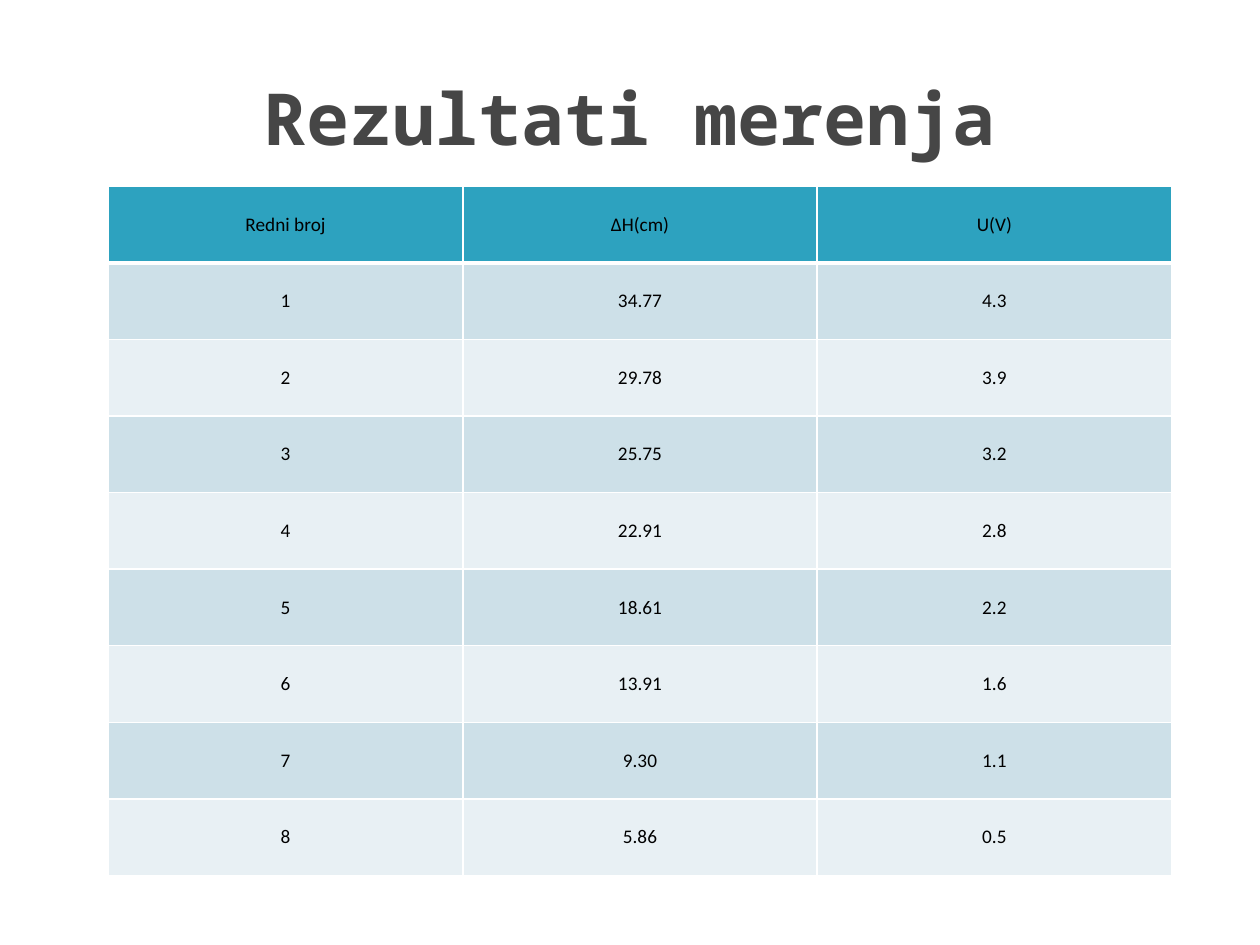
from dataclasses import dataclass

import pptx
import pptx.dml.color
import pptx.enum.text
import pptx.oxml
import pptx.oxml.ns
import pptx.util
from pptx.util import Inches

TITLE = "Rezultati merenja"
HEADERS = ("Redni broj", "∆H(cm)", "U(V)")
MEASUREMENTS = (
    ("34.77", "4.3"),
    ("29.78", "3.9"),
    ("25.75", "3.2"),
    ("22.91", "2.8"),
    ("18.61", "2.2"),
    ("13.91", "1.6"),
    ("9.30", "1.1"),
    ("5.86", "0.5"),
)


@dataclass(frozen=True)
class Theme:
    title_font: str = "Noto Sans Mono"
    title_size: float = 41
    title_color: str = "464646"
    table_font: str = "Calibri"
    table_size: float = 11
    table_color: str = "000000"
    header_fill: str = "2DA2BF"
    band_fills: tuple = ("CDE0E8", "E8F0F4")
    border_color: str = "FFFFFF"
    border_width: float = 1
    header_rule_width: float = 3


THEME = Theme()


def color(value):
    return pptx.dml.color.RGBColor.from_string(value)


def write_centred(text_frame, text, font_name, size, font_color, bold=False):
    text_frame.text = text
    paragraph = text_frame.paragraphs[0]
    paragraph.alignment = pptx.enum.text.PP_ALIGN.CENTER
    font = paragraph.runs[0].font
    font.name = font_name
    font.size = pptx.util.Pt(size)
    font.bold = bold
    font.color.rgb = color(font_color)


def add_title(slide):
    shape = slide.shapes.add_textbox(Inches(0.5), Inches(0.3), Inches(9), Inches(1.25))
    text_frame = shape.text_frame
    text_frame.word_wrap = True
    text_frame.vertical_anchor = pptx.enum.text.MSO_ANCHOR.MIDDLE
    write_centred(text_frame, TITLE, THEME.title_font, THEME.title_size, THEME.title_color, True)


def set_borders(cell, row_index):
    widths = {side: THEME.border_width for side in ("lnL", "lnR", "lnT", "lnB")}
    if row_index == 0:
        widths["lnB"] = THEME.header_rule_width
    elif row_index == 1:
        widths["lnT"] = THEME.header_rule_width
    properties = cell._tc.get_or_add_tcPr()
    for side, width in widths.items():
        properties.append(pptx.oxml.parse_xml(
            f'<a:{side} {pptx.oxml.ns.nsdecls("a")} w="{pptx.util.Pt(width)}">'
            f'<a:solidFill><a:srgbClr val="{THEME.border_color}"/></a:solidFill></a:{side}>'
        ))


def format_cell(cell, text, row_index):
    write_centred(cell.text_frame, text, THEME.table_font, THEME.table_size, THEME.table_color)
    cell.vertical_anchor = pptx.enum.text.MSO_ANCHOR.MIDDLE
    cell.margin_left = cell.margin_right = cell.margin_top = cell.margin_bottom = 0
    set_borders(cell, row_index)
    cell.fill.solid()
    fill = THEME.band_fills[(row_index - 1) % 2] if row_index else THEME.header_fill
    cell.fill.fore_color.rgb = color(fill)


def add_results_table(slide):
    rows = [HEADERS]
    rows += [(str(number), *values) for number, values in enumerate(MEASUREMENTS, 1)]
    shape = slide.shapes.add_table(
        len(rows), len(HEADERS), Inches(0.86), Inches(1.48), Inches(8.44), Inches(5.47)
    )
    for row_index, row in enumerate(rows):
        for column_index, text in enumerate(row):
            format_cell(shape.table.cell(row_index, column_index), text, row_index)


def main():
    presentation = pptx.Presentation()
    presentation.slide_width = Inches(10)
    presentation.slide_height = Inches(7.5)
    slide = presentation.slides.add_slide(presentation.slide_layouts[6])
    add_title(slide)
    add_results_table(slide)
    presentation.save("out.pptx")


if __name__ == "__main__":
    main()
